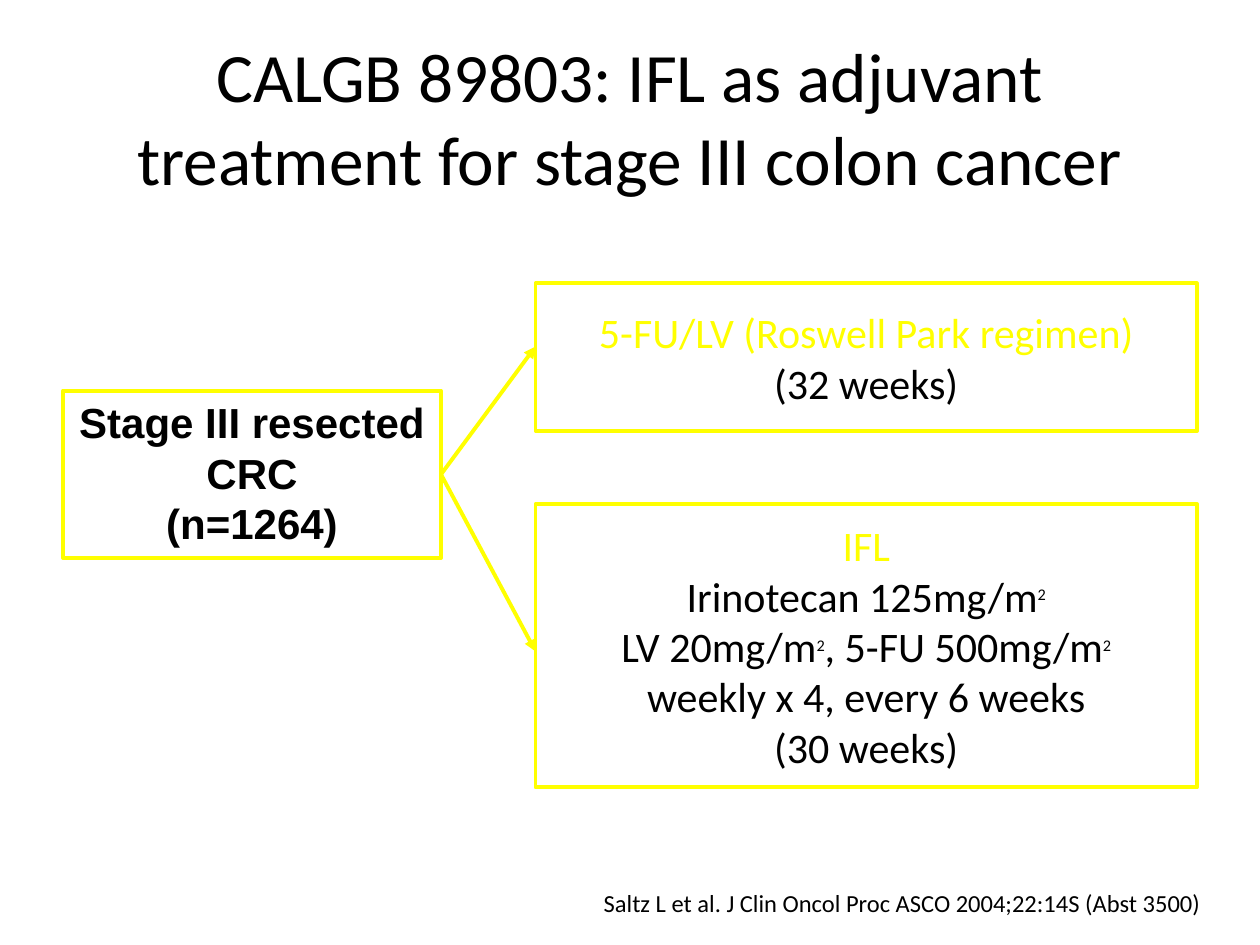
from dataclasses import dataclass

from lxml import etree
from pptx import Presentation
from pptx.dml.color import RGBColor
from pptx.enum.shapes import MSO_CONNECTOR, MSO_SHAPE
from pptx.enum.text import MSO_ANCHOR, MSO_AUTO_SIZE, PP_ALIGN
from pptx.oxml.ns import qn
from pptx.util import Inches, Pt

YELLOW = RGBColor(0xFF, 0xFF, 0x00)
BLACK = RGBColor(0x00, 0x00, 0x00)
CENTER, RIGHT = PP_ALIGN.CENTER, PP_ALIGN.RIGHT
TOP, MIDDLE = MSO_ANCHOR.TOP, MSO_ANCHOR.MIDDLE
NO_FIT, GROW = MSO_AUTO_SIZE.NONE, MSO_AUTO_SIZE.SHAPE_TO_FIT_TEXT
STRAIGHT, RECT = MSO_CONNECTOR.STRAIGHT, MSO_SHAPE.RECTANGLE
LINE_WIDTH = Pt(2.25)
SUPERSCRIPT_SIZE = Pt(16)
RIGHT_SIDE = 3


@dataclass
class Line:
    text: str
    color: RGBColor = BLACK


@dataclass
class Block:
    at: tuple[float, float, float, float]
    lines: list[Line]
    font: dict
    frame: dict
    paragraph: dict


BOX_FONT = {"name": "Calibri", "size": Pt(24)}
BOX_FRAME = {"word_wrap": False, "vertical_anchor": MIDDLE, "auto_size": NO_FIT}
CENTERED = {"alignment": CENTER}

TITLE = Block(
    (0.5, 0.3, 9, 1.25),
    [Line("CALGB 89803: IFL as adjuvant treatment for stage III colon cancer")],
    {"name": "Calibri", "size": Pt(39.6)},
    BOX_FRAME | {"word_wrap": True},
    CENTERED,
)
CITATION = Block(
    (3.63, 7.04, 6, 0.29),
    [Line("Saltz L et al. J Clin Oncol Proc ASCO 2004;22:14S (Abst 3500)")],
    {"name": "Calibri", "size": Pt(14)},
    {"word_wrap": True, "vertical_anchor": TOP, "auto_size": GROW},
    {"alignment": RIGHT, "line_spacing": 0.8},
)
PATIENTS = Block(
    (0.5, 3.1, 3, 1.33),
    [Line("Stage III resected"), Line("CRC"), Line("(n=1264)")],
    {"name": "Arial", "size": Pt(24), "bold": True},
    {"word_wrap": True, "vertical_anchor": TOP, "auto_size": GROW},
    CENTERED,
)
CONTROL_ARM = Block(
    (4.25, 2.25, 5.25, 1.17),
    [Line("5-FU/LV (Roswell Park regimen)", YELLOW), Line("(32 weeks)")],
    BOX_FONT,
    BOX_FRAME,
    CENTERED,
)
IFL_ARM = Block(
    (4.25, 4, 5.25, 2.25),
    [
        Line("IFL", YELLOW),
        Line("Irinotecan 125mg/m^2^"),
        Line("LV 20mg/m^2^, 5-FU 500mg/m^2^"),
        Line("weekly x 4, every 6 weeks"),
        Line("(30 weeks)"),
    ],
    BOX_FONT,
    BOX_FRAME,
    CENTERED,
)
ARROW_ENDS = [(4.25, 2.75), (4.25, 5.17)]


def apply(target, values: dict) -> None:
    """Set each attribute named in values."""
    for name, value in values.items():
        setattr(target, name, value)


def write(sp, block: Block) -> None:
    """Write the lines of a block, raising the parts between carets."""
    tf = sp.text_frame
    apply(tf, block.frame)
    for i, line in enumerate(block.lines):
        p = tf.add_paragraph() if i else tf.paragraphs[0]
        apply(p, block.paragraph)
        for j, part in enumerate(line.text.split("^")):
            if not part:
                continue
            r = p.add_run()
            r.text = part
            apply(r.font, block.font)
            r.font.color.rgb = line.color
            if j % 2:
                r.font.size = SUPERSCRIPT_SIZE
                r.font._element.set("baseline", "40000")


def add_text(s, block: Block):
    """Add a plain text box."""
    sp = s.shapes.add_textbox(*map(Inches, block.at))
    write(sp, block)
    return sp


def add_box(s, block: Block):
    """Add an outlined rectangle with text."""
    sp = s.shapes.add_shape(RECT, *map(Inches, block.at))
    sp.shadow.inherit = False
    sp.fill.background()
    apply(sp.line, {"width": LINE_WIDTH})
    sp.line.color.rgb = YELLOW
    write(sp, block)
    return sp


def add_arrow(s, source, x: float, y: float) -> None:
    """Add an arrow from the right side of a box to a point."""
    cx = s.shapes.add_connector(STRAIGHT, 0, 0, Inches(x), Inches(y))
    cx.begin_connect(source, RIGHT_SIDE)
    cx.line.width = LINE_WIDTH
    cx.line.color.rgb = YELLOW
    etree.SubElement(cx.line._get_or_add_ln(), qn("a:tailEnd"), type="triangle")
    etree.SubElement(cx._element.spPr, qn("a:effectLst"))


def main() -> None:
    """Build the trial design slide."""
    prs = Presentation()
    prs.slide_width, prs.slide_height = Inches(10), Inches(7.5)
    s = prs.slides.add_slide(prs.slide_layouts[6])
    add_text(s, TITLE)
    add_box(s, CONTROL_ARM)
    add_box(s, IFL_ARM)
    patients = add_box(s, PATIENTS)
    add_text(s, CITATION)
    for x, y in ARROW_ENDS:
        add_arrow(s, patients, x, y)
    prs.save("out.pptx")


if __name__ == "__main__":
    main()
